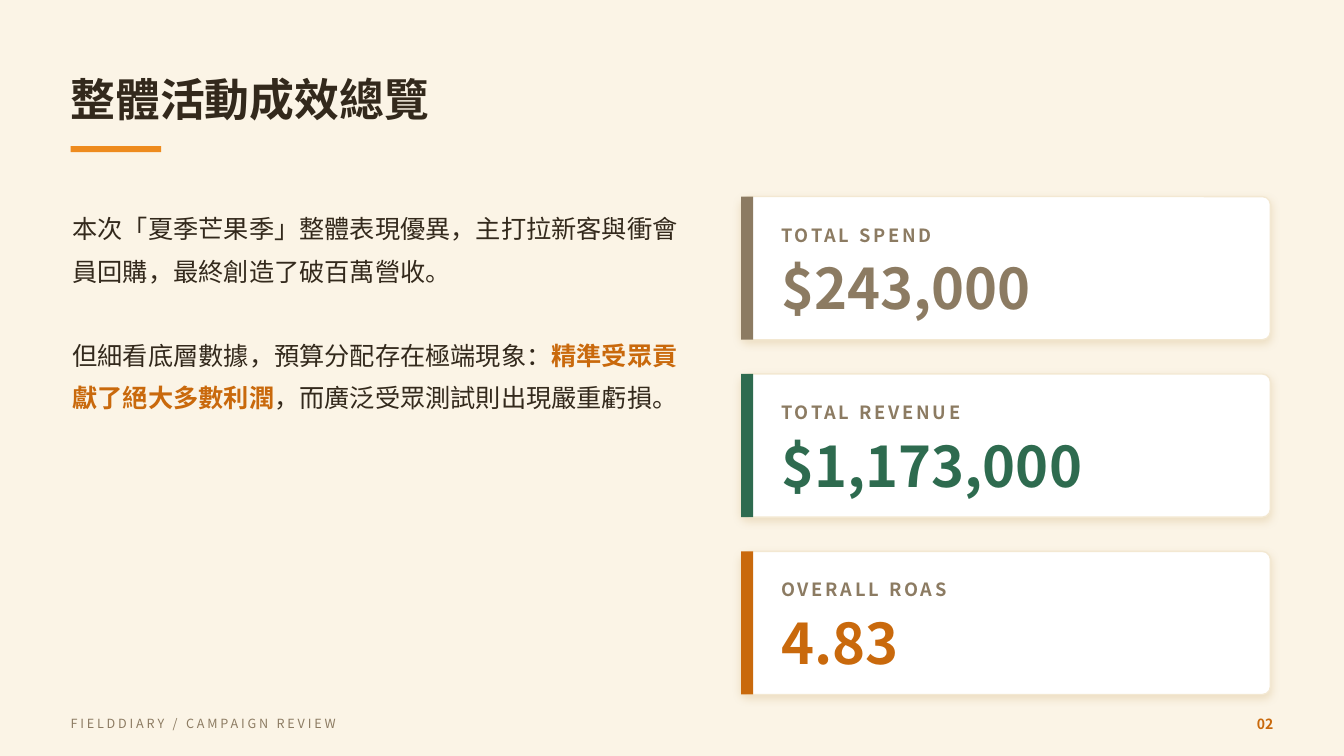
from lxml import etree
from pptx import Presentation
from pptx.dml.color import RGBColor
from pptx.enum.shapes import MSO_SHAPE as Shape
from pptx.enum.text import MSO_ANCHOR as Anchor, PP_ALIGN as Align
from pptx.oxml import parse_xml
from pptx.oxml.ns import nsdecls, qn
from pptx.util import Inches, Pt

FONT = "Noto Sans CJK TC"
CREAM = RGBColor(0xFB, 0xF4, 0xE6)
INK = RGBColor(0x33, 0x29, 0x1C)
MANGO = RGBColor(0xEE, 0x8B, 0x1E)
RUST = RGBColor(0xC9, 0x69, 0x0C)
TAUPE = RGBColor(0x8C, 0x7B, 0x62)
GREEN = RGBColor(0x2E, 0x6B, 0x4F)
WHITE = RGBColor(0xFF, 0xFF, 0xFF)
SAND = RGBColor(0xF3, 0xE8, 0xD2)

TITLE = "整體活動成效總覽"
# Each paragraph is a list of (text, highlighted) spans.
SUMMARY = [
    [("本次「夏季芒果季」整體表現優異，主打拉新客與衝會員回購，最終創造了破百萬營收。", False)],
    [("但細看底層數據，預算分配存在極端現象：", False),
     ("精準受眾貢獻了絕大多數利潤", True),
     ("，而廣泛受眾測試則出現嚴重虧損。", False)],
]
METRICS = [
    ("TOTAL SPEND", "$243,000", TAUPE),
    ("TOTAL REVENUE", "$1,173,000", GREEN),
    ("OVERALL ROAS", "4.83", RUST),
]
FOOTER = "FIELDDIARY / CAMPAIGN REVIEW"
PAGE_NUMBER = "02"

CARD_LEFT, CARD_TOP, CARD_WIDTH, CARD_HEIGHT = 7.35, 1.95, 5.25, 1.42
CARD_STEP = 1.76
CARD_TEXT_LEFT, CARD_TEXT_WIDTH = 7.75, 4.55

CARD_SHADOW = (
    f'<a:effectLst {nsdecls("a")}><a:outerShdw blurRad="{Pt(6)}" dist="{Pt(2)}" '
    'dir="5400000" algn="ctr" rotWithShape="0"><a:srgbClr val="C9A86A">'
    '<a:alpha val="28000"/></a:srgbClr></a:outerShdw></a:effectLst>'
)


def style(font, size, color, bold=False, spacing=0):
    """Set a font for Latin and East Asian text, with letter spacing in points."""
    font.name, font.size, font.bold = FONT, Pt(size), bold
    font.color.rgb = color
    properties = font._element if hasattr(font, "_element") else font._rPr
    etree.SubElement(properties, qn("a:ea")).set("typeface", FONT)
    if spacing:
        properties.set("spc", str(spacing * 100))


def add_box(page, left, top, width, height, anchor=Anchor.MIDDLE):
    box = page.shapes.add_textbox(*map(Inches, (left, top, width, height)))
    frame = box.text_frame
    frame.margin_left = frame.margin_top = frame.margin_right = frame.margin_bottom = 0
    frame.word_wrap = True
    frame.vertical_anchor = anchor
    return frame


def add_line(page, place, text, size, color, bold=True, spacing=0, align=Align.LEFT):
    para = add_box(page, *place).paragraphs[0]
    para.text = text
    para.alignment = align
    style(para.font, size, color, bold, spacing)


def add_bar(page, left, top, width, height, color, kind=Shape.RECTANGLE):
    bar = page.shapes.add_shape(kind, *map(Inches, (left, top, width, height)))
    bar.shadow.inherit = False
    bar.fill.solid()
    bar.fill.fore_color.rgb = color
    bar.line.fill.background()
    return bar


def add_summary(page):
    frame = add_box(page, 0.72, 2, 6, 3.8, Anchor.TOP)
    for index, spans in enumerate(SUMMARY):
        para = frame.add_paragraph() if index else frame.paragraphs[0]
        para.line_spacing = 1.4
        if index:
            para.space_before = Pt(30)
        for text, highlighted in spans:
            span = para.add_run()
            span.text = text
            style(span.font, 18, RUST if highlighted else INK, highlighted)


def add_card(page, top, label, value, color):
    card = add_bar(page, CARD_LEFT, top, CARD_WIDTH, CARD_HEIGHT, WHITE, Shape.ROUNDED_RECTANGLE)
    card.adjustments[0] = 0.056
    card.line.color.rgb = SAND
    card.line.width = Pt(1)
    properties = card._element.spPr
    properties.replace(properties.find(qn("a:effectLst")), parse_xml(CARD_SHADOW))
    add_bar(page, CARD_LEFT, top, 0.12, CARD_HEIGHT, color)
    add_line(page, (CARD_TEXT_LEFT, top + 0.18, CARD_TEXT_WIDTH, 0.4), label, 13, TAUPE, spacing=2)
    add_line(page, (CARD_TEXT_LEFT, top + 0.5, CARD_TEXT_WIDTH, 0.8), value, 40, color)


def main():
    deck = Presentation()
    deck.slide_width, deck.slide_height = Inches(13.33), Inches(7.5)
    page = deck.slides.add_slide(deck.slide_layouts[6])
    page.background.fill.solid()
    page.background.fill.fore_color.rgb = CREAM

    add_line(page, (0.7, 0.55, 11.9, 0.85), TITLE, 32, INK)
    add_bar(page, 0.7, 1.45, 0.9, 0.06, MANGO)
    add_summary(page)
    for index, metric in enumerate(METRICS):
        add_card(page, CARD_TOP + index * CARD_STEP, *metric)
    add_line(page, (0.7, 7.02, 9, 0.32), FOOTER, 9, TAUPE, bold=False, spacing=2)
    add_line(page, (11.8, 7.02, 0.83, 0.32), PAGE_NUMBER, 10, RUST, align=Align.RIGHT)
    deck.save("out.pptx")


if __name__ == "__main__":
    main()
